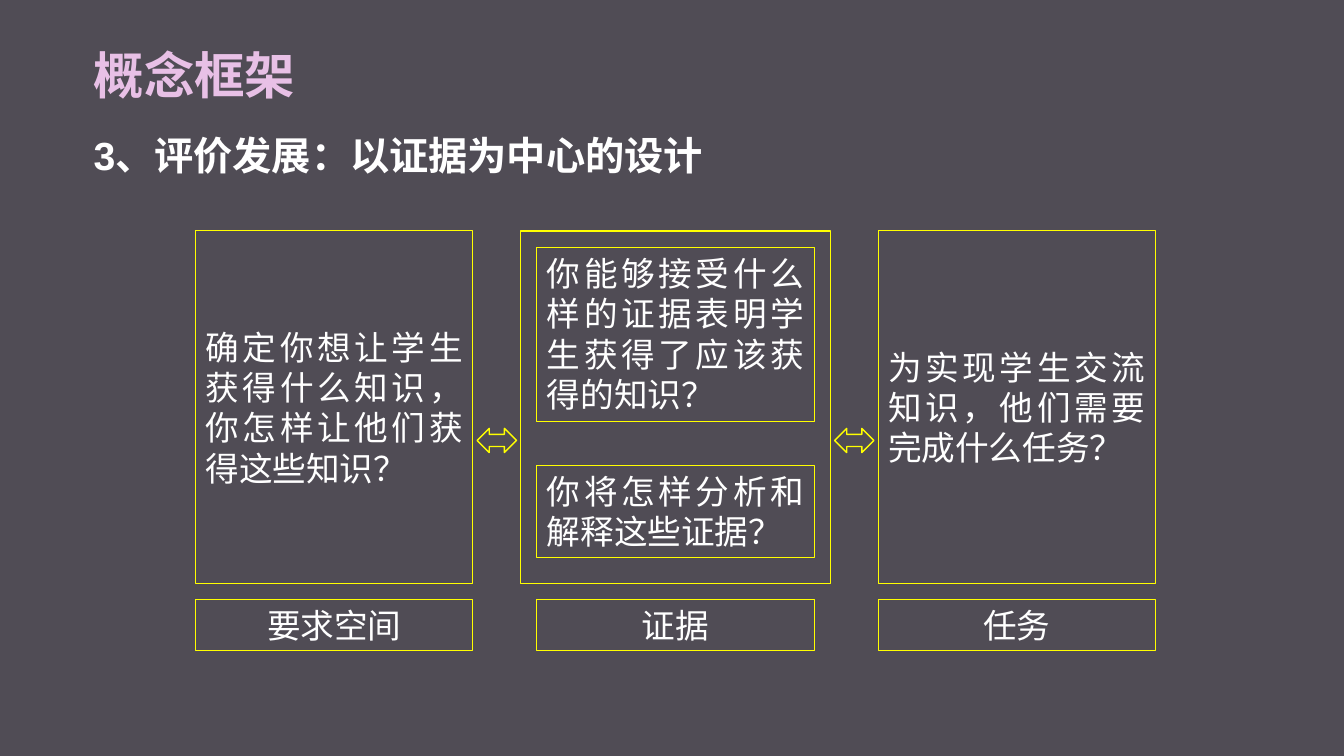
from dataclasses import dataclass

from pptx import Presentation
from pptx import util as u
from pptx.dml.color import RGBColor
from pptx.enum import shapes, text

BACKGROUND = RGBColor(0x50, 0x4C, 0x55)
PINK = RGBColor(0xE8, 0xC0, 0xE6)
PURPLE = RGBColor(0xB6, 0x86, 0xDA)
WHITE = RGBColor(0xFF, 0xFF, 0xFF)
YELLOW = RGBColor(0xFF, 0xFF, 0x00)

CARD_WIDTH = 2.75
CARD_HEIGHT = 3.5
LABEL_HEIGHT = 0.5
FRAME_WIDTH = 3.07
ARROW_WIDTH, ARROW_HEIGHT = 0.39, 0.24

LABELS = ["要求空间", "证据", "任务"]
QUESTIONS = {
    0: "确定你想让学生获得什么知识，你怎样让他们获得这些知识？",
    2: "为实现学生交流知识，他们需要完成什么任务？",
}
EVIDENCE_QUESTIONS = [
    (0.17, 1.72, "你能够接受什么样的证据表明学生获得了应该获得的知识？"),
    (2.33, 0.91, "你将怎样分析和解释这些证据？"),
]


@dataclass
class Box:
    left: float
    top: float
    width: float
    height: float

    @property
    def right(self):
        return self.left + self.width

    @property
    def center(self):
        return self.left + self.width / 2

    @property
    def middle(self):
        return self.top + self.height / 2

    def inches(self):
        return [u.Inches(n) for n in (self.left, self.top, self.width, self.height)]


def centered(center, top, width, height):
    return Box(center - width / 2, top, width, height)


def add_outline(page, kind, box, weight):
    shape = page.shapes.add_shape(kind, *box.inches())
    shape.shadow.inherit = False
    shape.fill.background()
    shape.line.color.rgb = YELLOW
    shape.line.width = u.Pt(weight)
    return shape


def add_card(page, box, words, align=text.PP_ALIGN.JUSTIFY, anchor=text.MSO_ANCHOR.TOP):
    card = add_outline(page, shapes.MSO_SHAPE.RECTANGLE, box, 0.75)
    frame = card.text_frame
    frame.text = words
    frame.word_wrap = True
    frame.vertical_anchor = anchor
    para = frame.paragraphs[0]
    para.alignment = align
    font = para.runs[0].font
    font.name, font.size = "Times New Roman", u.Pt(24)
    font.color.rgb = WHITE


def set_heading(shape, words, size, anchor):
    frame = shape.text_frame
    frame.text = words
    frame.word_wrap = True
    frame.auto_size = text.MSO_AUTO_SIZE.NONE
    frame.vertical_anchor = anchor
    para = frame.paragraphs[0]
    para.alignment = text.PP_ALIGN.LEFT
    para.line_spacing = 0.9
    font = para.runs[0].font
    font.name, font.size, font.bold = "Arial", u.Pt(size), True
    return font


def add_headings(page, box):
    title = page.shapes.title
    title.left, title.top, title.width, title.height = Box(
        box.left, box.top, box.width, 0.66).inches()
    font = set_heading(title, "概念框架", 36, text.MSO_ANCHOR.BOTTOM)
    font.fill.gradient()
    font.fill.gradient_angle = 270
    for stop, color, position in zip(font.fill.gradient_stops, (PINK, PURPLE), (0.04, 1)):
        stop.color.rgb = color
        stop.position = position

    subtitle = page.shapes.add_textbox(*Box(box.left, box.top + 0.87, box.width, 0.71).inches())
    font = set_heading(subtitle, "3、评价发展：以证据为中心的设计", 28, text.MSO_ANCHOR.TOP)
    font.color.rgb = WHITE


def add_evidence(page, box):
    add_outline(page, shapes.MSO_SHAPE.RECTANGLE, box, 1)
    for offset, height, words in EVIDENCE_QUESTIONS:
        add_card(page, centered(box.center, box.top + offset, CARD_WIDTH, height), words)


def add_framework(page, box):
    pitch = (box.width - CARD_WIDTH) / (len(LABELS) - 1)
    columns = [Box(box.left + i * pitch, box.top, CARD_WIDTH, CARD_HEIGHT)
               for i in range(len(LABELS))]
    for column, label in zip(columns, LABELS):
        place = Box(column.left, box.top + box.height - LABEL_HEIGHT, CARD_WIDTH, LABEL_HEIGHT)
        add_card(page, place, label, text.PP_ALIGN.CENTER)
    for i, words in QUESTIONS.items():
        add_card(page, columns[i], words, anchor=text.MSO_ANCHOR.MIDDLE)

    evidence = centered(box.center, box.top, FRAME_WIDTH, CARD_HEIGHT)
    add_evidence(page, evidence)

    for start, end in ((columns[0].right, evidence.left), (evidence.right, columns[2].left)):
        place = centered((start + end) / 2, box.middle - ARROW_HEIGHT / 2,
                         ARROW_WIDTH, ARROW_HEIGHT)
        add_outline(page, shapes.MSO_SHAPE.LEFT_RIGHT_ARROW, place, 1)


def main():
    deck = Presentation()
    deck.slide_width, deck.slide_height = u.Inches(13.33), u.Inches(7.5)
    page = deck.slides.add_slide(deck.slide_layouts.get_by_name("Title Only"))
    page.background.fill.solid()
    page.background.fill.fore_color.rgb = BACKGROUND
    add_headings(page, Box(0.83, 0.44, 11.68, 1.58))
    add_framework(page, Box(1.94, 2.29, 9.52, 4.16))
    deck.save("out.pptx")


if __name__ == "__main__":
    main()
